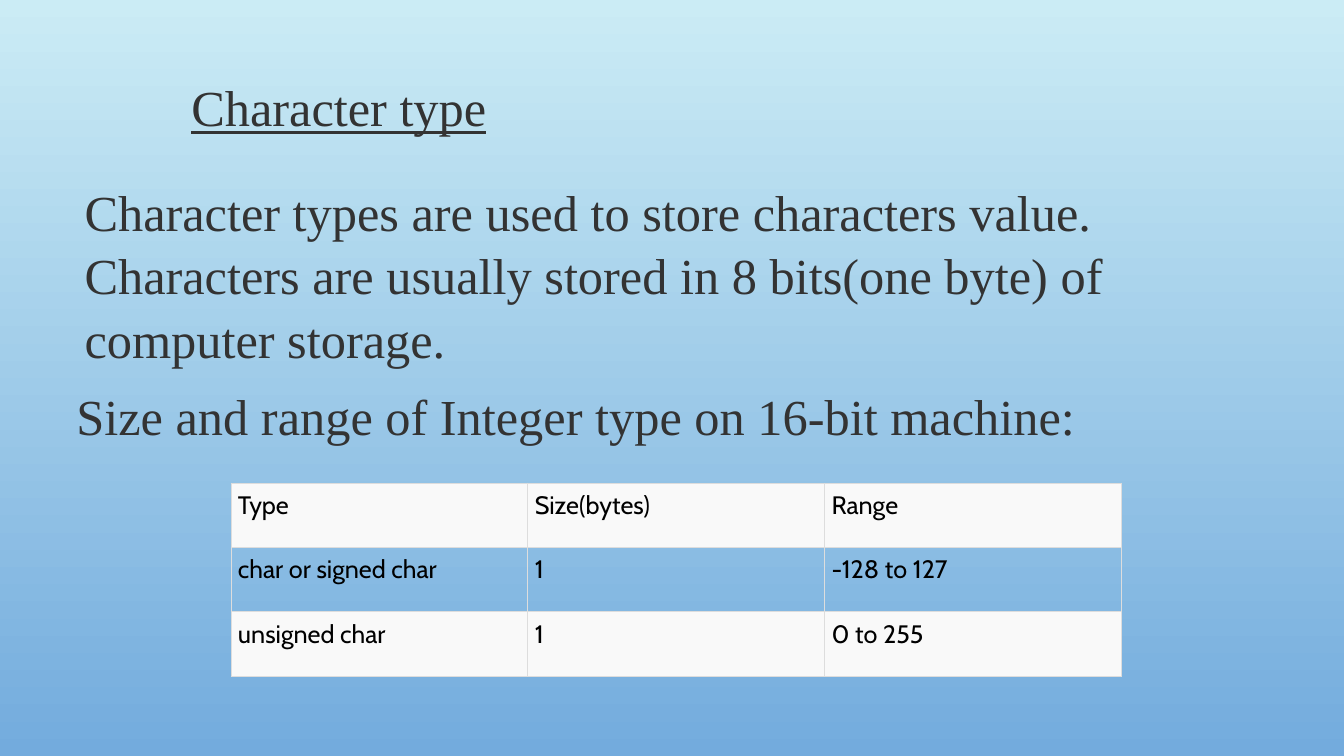
from lxml import etree
from pptx import Presentation
from pptx.dml.color import RGBColor
from pptx.enum import text
from pptx.oxml import ns
from pptx.util import Pt

COLORS = {
    "sky": "CBECF5",
    "blue": "73ABDD",
    "body": "333333",
    "cell_text": "000000",
    "stripe": "F9F9F9",
    "border": "DDDDDD",
}


def write(tf, words, font="Times New Roman", size=36, color="body",
          underline=None, spacing=None):
    p = tf.paragraphs[0]
    p.line_spacing = spacing
    r = p.add_run()
    r.text = words
    r.font.name = font
    r.font.size = Pt(size)
    r.font.underline = underline
    r.font.color.rgb = RGBColor.from_string(COLORS[color])


def add_border(cell):
    tcPr = cell._tc.get_or_add_tcPr()
    for i, side in enumerate(("lnL", "lnR", "lnT", "lnB")):
        ln = etree.Element(ns.qn(f"a:{side}"), w=str(Pt(0.6)))
        fill = etree.SubElement(ln, ns.qn("a:solidFill"))
        etree.SubElement(fill, ns.qn("a:srgbClr"), val=COLORS["border"])
        tcPr.insert(i, ln)


prs = Presentation()
prs.slide_width, prs.slide_height = Pt(960), Pt(540)
s = prs.slides.add_slide(prs.slide_layouts[6])

# Background gradient, light at the top
bg = s.background.fill
bg.gradient()
bg.gradient_angle = 270
for stop, name, position in zip(bg.gradient_stops, ("sky", "blue"), (0, 1)):
    stop.color.rgb = RGBColor.from_string(COLORS[name])
    stop.position = position

# Heading and paragraphs
texts = [
    (129.6, 46.8, 618, 51, "Character type", True),
    (53.3, 121.7, 867.6, 138,
     "Character types are used to store characters value. Characters are "
     "usually stored in 8 bits(one byte) of computer storage.", None),
    (47.5, 267.1, 867.6, 138,
     "Size and range of Integer type on 16-bit machine:", None),
]
for left, top, width, height, words, underline in texts:
    sp = s.shapes.add_textbox(Pt(left), Pt(top), Pt(width), Pt(height))
    tf = sp.text_frame
    tf.word_wrap = True
    tf.margin_top = Pt(5.5)
    tf.vertical_anchor = text.MSO_ANCHOR.TOP
    write(tf, words, underline=underline, spacing=1.05)

# Table of character types
rows = [
    ("Type", "Size(bytes)", "Range"),
    ("char or signed char", "1", "-128 to 127"),
    ("unsigned char", "1", "0 to 255"),
]
table = s.shapes.add_table(3, 3, Pt(165), Pt(345), Pt(636), Pt(138)).table
table.first_row = table.horz_banding = False
for i, row in enumerate(rows):
    for j, words in enumerate(row):
        cell = table.cell(i, j)
        cell.margin_left = cell.margin_right = Pt(5)
        cell.margin_top = cell.margin_bottom = Pt(5)
        write(cell.text_frame, words, font="Cabin", size=18, color="cell_text")
        if i % 2:
            cell.fill.background()
        else:
            cell.fill.solid()
            cell.fill.fore_color.rgb = RGBColor.from_string(COLORS["stripe"])
        add_border(cell)

prs.save("out.pptx")
